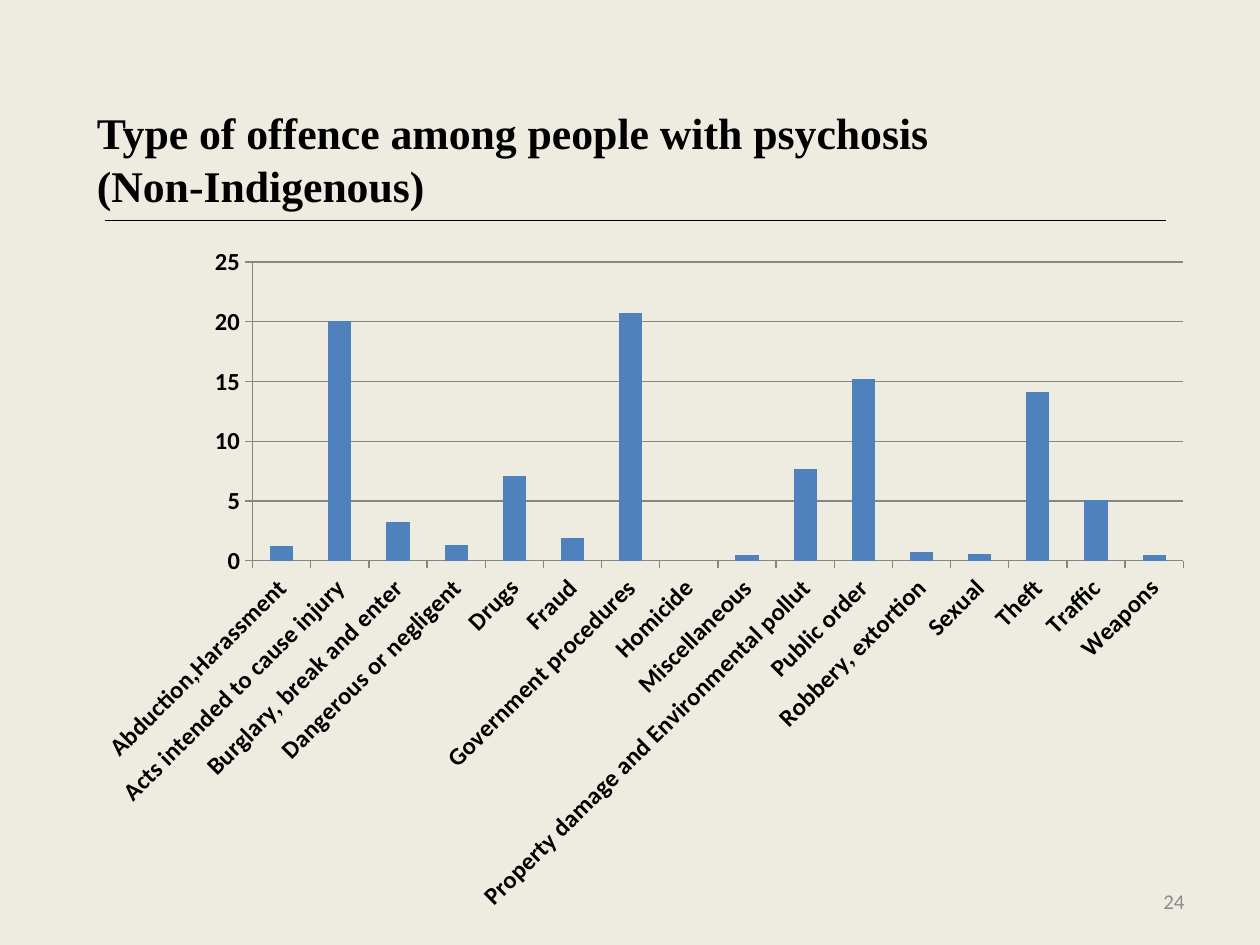
from lxml import etree
from pptx import Presentation
from pptx import util as u
from pptx.chart import data as chart_data
from pptx.dml.color import RGBColor
from pptx.enum import chart as charts, shapes, text
from pptx.oxml import ns

WIDTH, HEIGHT = 10, 7.5
COLOURS = {"paper": "EEECE1", "ink": "000000", "bar": "4F81BD",
           "axis": "868686", "number": "8C8C8C"}
TITLE = ["Type of offence among people with psychosis", "(Non-Indigenous)"]
OFFENCES = {
    "Abduction,Harassment": 1.2,
    "Acts intended to cause injury": 20.1,
    "Burglary, break and enter": 3.2,
    "Dangerous or negligent": 1.3,
    "Drugs": 7.1,
    "Fraud": 1.9,
    "Government procedures": 20.7,
    "Homicide": 0,
    "Miscellaneous": 0.5,
    "Property damage and Environmental pollut": 7.7,
    "Public order": 15.2,
    "Robbery, extortion": 0.7,
    "Sexual": 0.6,
    "Theft": 14.1,
    "Traffic": 5.1,
    "Weapons": 0.5,
}
PLOT_SHARES = {"x": 0.15, "y": 0.04, "w": 0.83, "h": 0.43}


def colour(name):
    """Return the named colour."""
    return RGBColor.from_string(COLOURS[name])


def across(share):
    """Return a share of the slide's width."""
    return u.Inches(WIDTH * share)


def down(share):
    """Return a share of the slide's height."""
    return u.Inches(HEIGHT * share)


def place(left, top, width, height):
    """Return a frame given as shares of the slide."""
    return across(left), down(top), across(width), down(height)


def set_format(target, values):
    """Set each attribute in values on the target."""
    for name, value in values.items():
        setattr(target, name, value)


def set_font(font, shade, **values):
    """Give a font its colour and format values."""
    set_format(font, values)
    font.color.rgb = colour(shade)


def add_text(page, lines, frame, shade, align, **font):
    """Add a middle-anchored text box of one paragraph."""
    box = page.shapes.add_textbox(*place(*frame))
    set_format(box.text_frame, {"word_wrap": True,
                                "vertical_anchor": text.MSO_ANCHOR.MIDDLE})
    para = box.text_frame.paragraphs[0]
    para.alignment = align
    for index, line in enumerate(lines):
        if index:
            para.add_line_break()
        span = para.add_run()
        span.text = line
        set_font(span.font, shade, **font)


def add_rule(page, left, right, height):
    """Add a thin horizontal line."""
    rule = page.shapes.add_connector(shapes.MSO_CONNECTOR.STRAIGHT, across(left),
                                     down(height), across(right), down(height))
    rule.line.color.rgb = colour("ink")
    rule.line.width = u.Pt(0.75)
    etree.SubElement(rule._element.spPr, ns.qn("a:effectLst"))


def draw_line(line):
    """Give an axis or grid line its colour and width."""
    line.color.rgb = colour("axis")
    line.width = u.Pt(0.75)


def style_axis(axis, grid):
    """Style an axis with bold labels and outside ticks."""
    set_format(axis, {"has_major_gridlines": grid,
                      "major_tick_mark": charts.XL_TICK_MARK.OUTSIDE,
                      "minor_tick_mark": charts.XL_TICK_MARK.NONE})
    draw_line(axis.format.line)
    if grid:
        draw_line(axis.major_gridlines.format.line)
    set_font(axis.tick_labels.font, "ink", name="Calibri", size=u.Pt(14), bold=True)


def fix_plot(chart, shares):
    """Fix the inner plot area to shares of the chart's frame."""
    area = chart._chartSpace.chart.plotArea
    for old in area.findall(ns.qn("c:layout")):
        area.remove(old)
    layout = etree.Element(ns.qn("c:layout"))
    area.insert(0, layout)
    manual = etree.SubElement(layout, ns.qn("c:manualLayout"))
    settings = {"layoutTarget": "inner", "xMode": "edge", "yMode": "edge", **shares}
    for name, value in settings.items():
        etree.SubElement(manual, ns.qn("c:" + name)).set("val", str(value))


def add_columns(page, values, frame):
    """Add the column chart of offences."""
    data = chart_data.CategoryChartData()
    data.categories = list(values)
    data.add_series("Series 1", list(values.values()))
    kind = charts.XL_CHART_TYPE.COLUMN_CLUSTERED
    chart = page.shapes.add_chart(kind, *place(*frame), data).chart
    set_format(chart, {"has_legend": False, "has_title": False})
    set_font(chart.font, "ink", name="Calibri", size=u.Pt(10))
    set_format(chart.plots[0], {"gap_width": 150, "vary_by_categories": False})
    fill = chart.plots[0].series[0].format.fill
    fill.solid()
    fill.fore_color.rgb = colour("bar")
    style_axis(chart.category_axis, False)
    style_axis(chart.value_axis, True)
    set_format(chart.value_axis, {"minimum_scale": 0, "maximum_scale": 25,
                                  "major_unit": 5})
    chart.category_axis._element.txPr.bodyPr.set("rot", str(-45 * 60000))
    fix_plot(chart, PLOT_SHARES)


def main():
    """Build and save the slide."""
    deck = Presentation()
    set_format(deck, {"slide_width": across(1), "slide_height": down(1)})
    page = deck.slides.add_slide(deck.slide_layouts[6])
    page.background.fill.solid()
    page.background.fill.fore_color.rgb = colour("paper")
    add_rule(page, 0.083, 0.925, 0.233)
    add_text(page, TITLE, (0.067, 0.123, 0.913, 0.089), "ink", text.PP_ALIGN.LEFT,
             name="Times New Roman", size=u.Pt(25), bold=True)
    add_text(page, ["24"], (0.717, 0.927, 0.233, 0.053), "number",
             text.PP_ALIGN.RIGHT, name="Calibri", size=u.Pt(12))
    add_columns(page, OFFENCES, (0.067, 0.248, 0.89, 0.735))
    deck.save("out.pptx")


if __name__ == "__main__":
    main()
